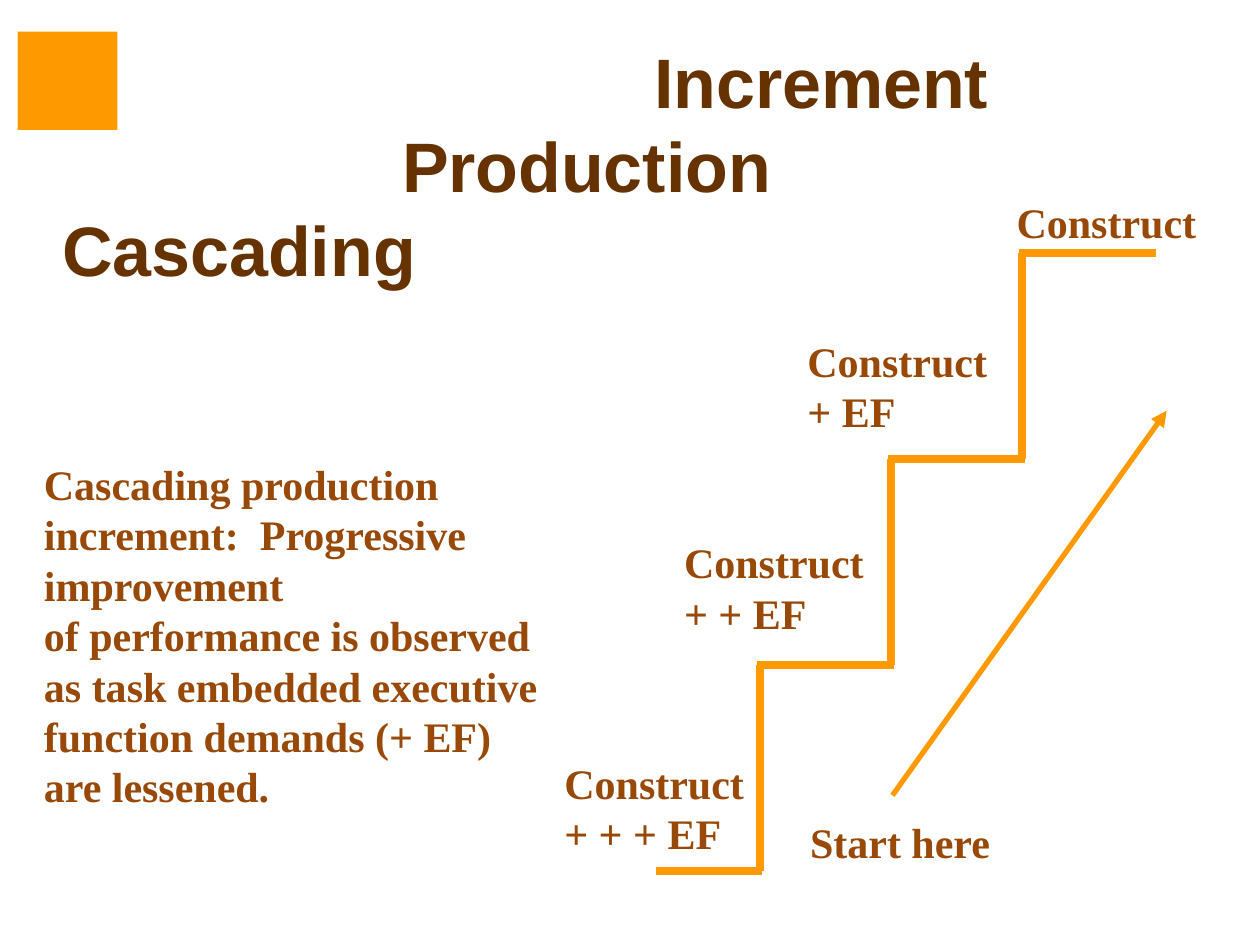
from typing import NamedTuple

from pptx import Presentation
from pptx.dml.color import RGBColor
from pptx.enum.shapes import MSO_CONNECTOR as CONN, MSO_SHAPE as SHAPE
from pptx.enum.text import MSO_ANCHOR as ANCHOR, MSO_AUTO_SIZE as FIT, PP_ALIGN as ALIGN
from pptx.oxml.ns import qn
from pptx.util import Pt

ORANGE = RGBColor(0xFF, 0x99, 0x00)
DARK_BROWN = RGBColor(0x66, 0x33, 0x00)
BROWN = RGBColor(0x98, 0x48, 0x07)


class Label(NamedTuple):
    left: float
    top: float
    width: float
    height: float
    lines: tuple[str, ...]
    wrap: bool = False


# Title lines with their indents
TITLE = (("Increment", 360.7), ("Production", 216.7), ("Cascading", 22.5))

EXPLANATION = Label(18, 258.5, 318.2, 211, (
    "Cascading production increment:  Progressive improvement",
    "of performance is observed",
    "as task embedded executive function demands (+ EF)",
    "are lessened.",
), True)
STEP_LABELS = (
    Label(573.8, 108.7, 118, 36, ("Construct",)),
    Label(454.3, 188, 124.6, 65.5, ("Construct", "+ EF")),
    Label(383.8, 303.1, 124.6, 65.5, ("Construct", "+ + EF")),
    Label(315.4, 429.1, 167.8, 65.5, ("Construct", "+ + + EF"), True),
)
START_LABEL = Label(455.8, 463, 118, 36, ("Start here",))

# Staircase geometry
STEPS = 3
FIRST_RISER, FLOOR, FLOOR_LEFT = 434.2, 497.5, 375
RUN, RISE, OVERLAP = 74.9, 117.6, 1.5


def format_lines(tf, lines, font: str, size: float, color: RGBColor) -> None:
    for i, text in enumerate(lines):
        p = tf.paragraphs[0] if i == 0 else tf.add_paragraph()
        p.text = text
        p.alignment = ALIGN.LEFT
        p.line_spacing = Pt(round(size * 1.2, 1))
        p.font.name, p.font.size, p.font.bold = font, Pt(size), True
        p.font.color.rgb = color


def add_label(shapes, label: Label) -> None:
    tf = shapes.add_textbox(*map(Pt, label[:4])).text_frame
    tf.word_wrap = label.wrap
    tf.auto_size = FIT.SHAPE_TO_FIT_TEXT
    format_lines(tf, label.lines, "Times New Roman", 24, BROWN)


def add_line(shapes, x1: float, y1: float, x2: float, y2: float, width: float):
    line = shapes.add_connector(CONN.STRAIGHT, Pt(x1), Pt(y1), Pt(x2), Pt(y2))
    line.line.color.rgb = ORANGE
    line.line.width = Pt(width)
    sp_pr = line._element.spPr
    sp_pr.append(sp_pr.makeelement(qn("a:effectLst"), {}))
    return line


def add_staircase(shapes) -> None:
    stairs = shapes.add_group_shape().shapes
    add_line(stairs, FLOOR_LEFT, FLOOR, FIRST_RISER + OVERLAP, FLOOR, 4.5)
    for i in range(STEPS):
        x, y = FIRST_RISER + i * RUN, FLOOR - i * RISE
        top = y - RISE
        add_line(stairs, x, top, x, y, 4.5)
        add_line(stairs, x - OVERLAP, top, x + RUN + OVERLAP, top, 4.5)


def add_title(s) -> None:
    title = s.shapes.title
    title.left, title.top, title.width, title.height = map(Pt, (5.8, 49, 648, 90))
    tf = title.text_frame
    tf.auto_size = FIT.NONE
    tf.vertical_anchor = ANCHOR.MIDDLE
    format_lines(tf, [text for text, _ in TITLE], "Arial", 40, DARK_BROWN)
    for p, (_, indent) in zip(tf.paragraphs, TITLE):
        p.space_before = Pt(0)
        p_pr = p._p.get_or_add_pPr()
        p_pr.set("marL", str(int(Pt(indent))))
        p_pr.set("indent", "0")


def main() -> None:
    prs = Presentation()
    prs.slide_width, prs.slide_height = Pt(720), Pt(540)
    s = prs.slides.add_slide(prs.slide_layouts[5])

    add_title(s)
    add_label(s.shapes, EXPLANATION)
    add_staircase(s.shapes)
    for label in STEP_LABELS:
        add_label(s.shapes, label)

    # Upward arrow from the starting point
    arrow = add_line(s.shapes, 510, 454.5, 666.7, 234.7, 3)
    ln = arrow.line._get_or_add_ln()
    ln.append(ln.makeelement(qn("a:tailEnd"), {"type": "triangle"}))
    add_label(s.shapes, START_LABEL)

    # Corner square
    square = s.shapes.add_shape(SHAPE.RECTANGLE, Pt(10.1), Pt(18), Pt(57), Pt(56.2))
    square.shadow.inherit = False
    square.fill.solid()
    square.fill.fore_color.rgb = ORANGE
    square.line.fill.background()

    prs.save("out.pptx")


if __name__ == "__main__":
    main()
